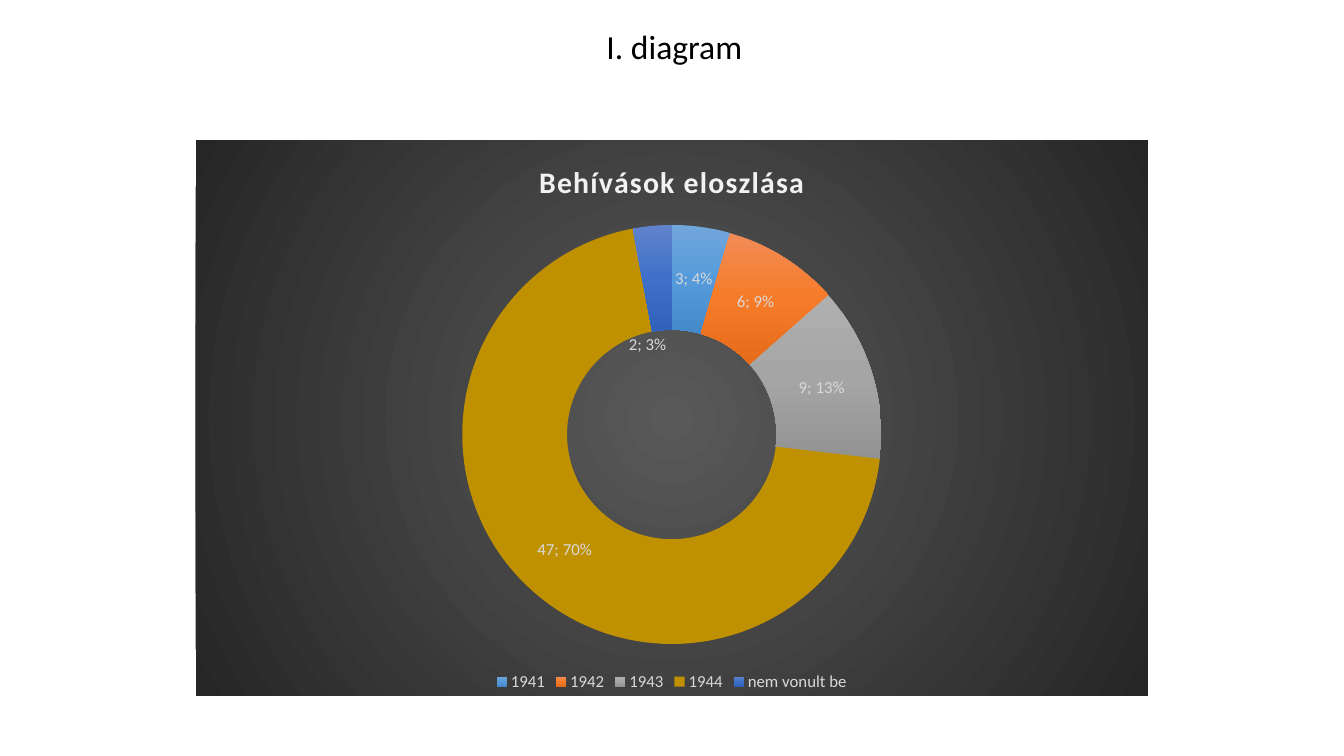
from dataclasses import dataclass

from lxml.etree import SubElement
from pptx import Presentation
from pptx.chart.chart import Chart
from pptx.chart.data import CategoryChartData
from pptx.dml.color import RGBColor
from pptx.enum.chart import XL_CHART_TYPE, XL_LEGEND_POSITION
from pptx.enum.text import MSO_AUTO_SIZE, PP_ALIGN
from pptx.oxml import parse_xml
from pptx.oxml.ns import nsdecls, qn
from pptx.slide import Slide
from pptx.util import Cm, Pt

BLACK = RGBColor(0x00, 0x00, 0x00)
LIGHT_GREY = RGBColor(0xD9, 0xD9, 0xD9)
TITLE_WHITE = RGBColor(0xF2, 0xF2, 0xF2)
BACKGROUND_CENTRE = RGBColor(0x59, 0x59, 0x59)
BACKGROUND_EDGE = RGBColor(0x26, 0x26, 0x26)
BLUES = (RGBColor(0x71, 0xA6, 0xDB), RGBColor(0x55, 0x9B, 0xDB), RGBColor(0x44, 0x8A, 0xCA))
ORANGES = (RGBColor(0xF1, 0x8C, 0x57), RGBColor(0xF6, 0x7B, 0x28), RGBColor(0xE5, 0x6C, 0x19))
GREYS = (RGBColor(0xAF, 0xAF, 0xAF), RGBColor(0xA5, 0xA5, 0xA5), RGBColor(0x93, 0x93, 0x93))
GOLD = RGBColor(0xBF, 0x90, 0x00)
INDIGOS = (RGBColor(0x61, 0x83, 0xCB), RGBColor(0x3E, 0x70, 0xCA), RGBColor(0x30, 0x62, 0xBB))

DOWNWARD = '<a:lin ang="5400000" scaled="0"/>'
FROM_CENTRE = (
    '<a:path path="circle"><a:fillToRect l="50000" t="50000" r="50000" b="50000"/></a:path>'
)
LABEL_FORMAT = {"name": "Calibri", "size": Pt(12), "color": LIGHT_GREY}


@dataclass(frozen=True)
class Slice:
    name: str
    count: int
    colours: tuple[RGBColor, ...]


SLICES = (
    Slice("1941", 3, BLUES),
    Slice("1942", 6, ORANGES),
    Slice("1943", 9, GREYS),
    Slice("1944", 47, (GOLD,)),
    Slice("nem vonult be", 2, INDIGOS),
)


def apply_format(font, values: dict) -> None:
    for name, value in values.items():
        if name == "color":
            font.color.rgb = value
        else:
            setattr(font, name, value)


def gradient(colours: tuple[RGBColor, ...], direction: str):
    step = 100000 // (len(colours) - 1)
    stops = "".join(
        f'<a:gs pos="{index * step}"><a:srgbClr val="{colour}"/></a:gs>'
        for index, colour in enumerate(colours)
    )
    return parse_xml(
        f'<a:gradFill {nsdecls("a")} rotWithShape="1">'
        f"<a:gsLst>{stops}</a:gsLst>{direction}</a:gradFill>"
    )


def manual_layout(**values):
    entries = "".join(f'<c:{name} val="{value}"/>' for name, value in values.items())
    return parse_xml(
        f'<c:layout {nsdecls("c")}><c:manualLayout>{entries}</c:manualLayout></c:layout>'
    )


def add_heading(page: Slide) -> None:
    box = page.shapes.add_textbox(Cm(11.13), Cm(0.53), Cm(11.73), Cm(1.27))
    box.text_frame.word_wrap = True
    box.text_frame.auto_size = MSO_AUTO_SIZE.SHAPE_TO_FIT_TEXT
    para = box.text_frame.paragraphs[0]
    para.alignment = PP_ALIGN.CENTER
    span = para.add_run()
    span.text = "I. diagram"
    apply_format(span.font, {"name": "Calibri", "size": Pt(24), "color": BLACK})


def add_doughnut(page: Slide) -> Chart:
    data = CategoryChartData()
    data.categories = [piece.name for piece in SLICES]
    data.add_series("Series 1", [piece.count for piece in SLICES])
    chart = page.shapes.add_chart(
        XL_CHART_TYPE.DOUGHNUT, Cm(4.93), Cm(3.53), Cm(24), Cm(14), data
    ).chart
    apply_format(chart.font, {"name": "Calibri", "size": Pt(10), "color": BLACK})
    chart.plots[0].vary_by_categories = True
    chart.element.xpath(".//c:holeSize")[0].set("val", "75")

    background = parse_xml(f'<c:spPr {nsdecls("c", "a")}><a:ln><a:noFill/></a:ln></c:spPr>')
    background.insert(0, gradient((BACKGROUND_CENTRE, BACKGROUND_EDGE), FROM_CENTRE))
    chart.element.xpath("./c:txPr")[0].addprevious(background)

    plot_area = chart.element.xpath(".//c:plotArea")[0]
    for layout in plot_area.xpath("./c:layout"):
        plot_area.remove(layout)
    plot_area.insert(0, manual_layout(
        layoutTarget="inner", xMode="edge", yMode="edge", x=0.28, y=0.15, w=0.44, h=0.76
    ))
    return chart


def add_chart_title(chart: Chart) -> None:
    chart.has_title = True
    span = chart.chart_title.text_frame.paragraphs[0].add_run()
    span.text = "Behívások eloszlása"
    apply_format(
        span.font, {"name": "Calibri", "size": Pt(21.3), "bold": True, "color": TITLE_WHITE}
    )
    chart.element.xpath(".//c:title//a:r/a:rPr")[0].set("spc", "100")


def add_legend(chart: Chart) -> None:
    chart.has_legend = True
    chart.legend.position = XL_LEGEND_POSITION.BOTTOM
    chart.legend.include_in_layout = False
    apply_format(chart.legend.font, LABEL_FORMAT)


def colour_slices(chart: Chart) -> None:
    for index, piece in enumerate(SLICES):
        fill = chart.plots[0].series[0].points[index].format.fill
        if len(piece.colours) == 1:
            fill.solid()
            fill.fore_color.rgb = piece.colours[0]
        else:
            fill.background()
            empty = chart.element.xpath(f'.//c:dPt[c:idx/@val="{index}"]/c:spPr/a:noFill')[0]
            empty.getparent().replace(empty, gradient(piece.colours, DOWNWARD))


def label_slices(chart: Chart) -> None:
    series = chart.plots[0].series[0]
    labels = series.data_labels
    apply_format(labels.font, LABEL_FORMAT)
    labels.show_value = True
    labels.show_percentage = True
    last = len(SLICES) - 1
    apply_format(series.points[last].data_label.font, LABEL_FORMAT)
    moved = chart.element.xpath(".//c:ser/c:dLbls/c:dLbl")[0]
    moved.find(qn("c:idx")).addnext(manual_layout(x=-0.01, y=0.12))
    moved.find(qn("c:showPercent")).set("val", "1")
    for holder in (moved, moved.getparent()):
        separator = SubElement(holder, qn("c:separator"))
        separator.text = "; "
        holder.find(qn("c:showBubbleSize")).addnext(separator)


def main() -> None:
    deck = Presentation()
    deck.slide_width, deck.slide_height = Cm(33.87), Cm(19.05)
    page = deck.slides.add_slide(deck.slide_layouts[6])
    chart = add_doughnut(page)
    add_chart_title(chart)
    add_legend(chart)
    colour_slices(chart)
    label_slices(chart)
    add_heading(page)
    deck.save("out.pptx")


if __name__ == "__main__":
    main()
